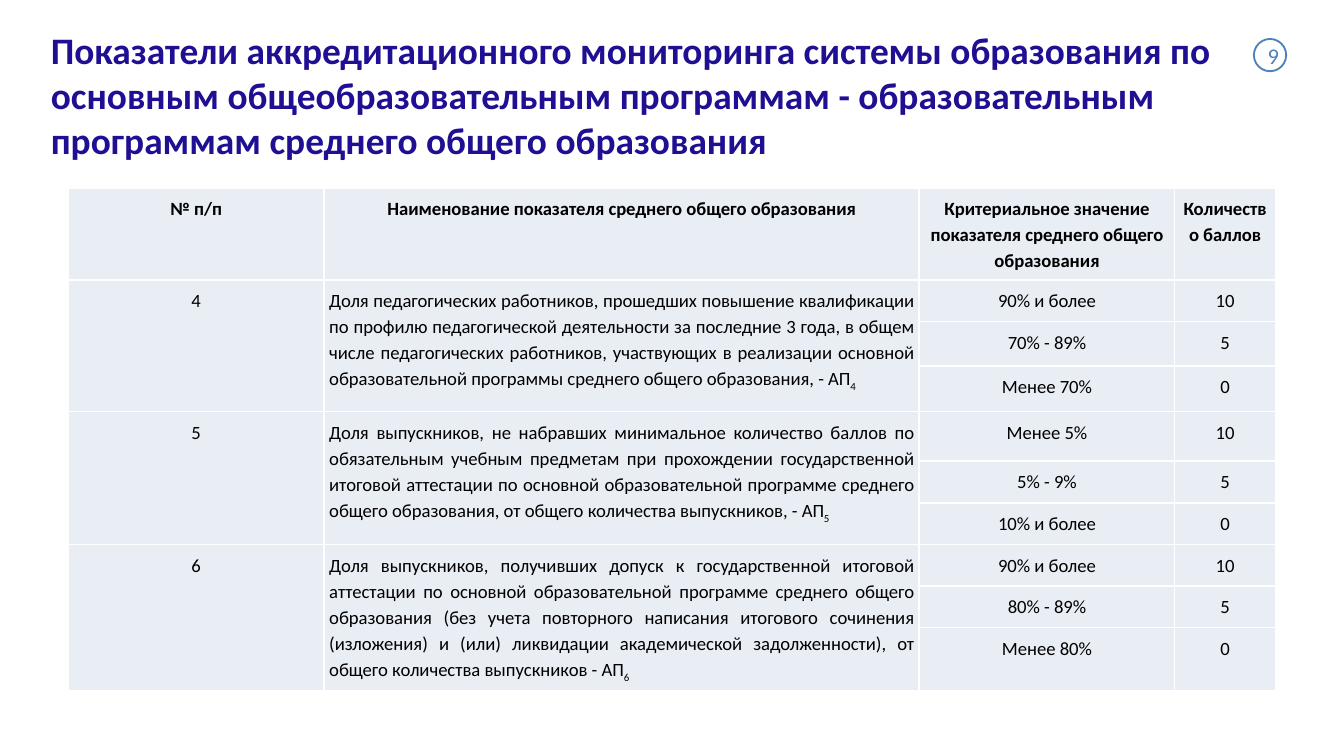
from lxml import etree
from pptx import Presentation
from pptx import util as u
from pptx.dml.color import RGBColor
from pptx.enum import shapes, text
from pptx.oxml.ns import qn

HUES = {"title": "1F0F93", "ink": "000000", "cell": "E9EDF4",
        "rule": "FFFFFF", "badge": "4F81BD"}
ALIGN = text.PP_ALIGN


def write(frame, words, size=10, hue="ink", bold=False, align=ALIGN.CENTER,
          space=None, sub="", pad=(0.1, 0.05, 0.1, 0.05),
          anchor=text.MSO_ANCHOR.MIDDLE):
    """Fill a text frame with one paragraph, ending in an optional subscript."""
    frame.word_wrap = True
    frame.vertical_anchor = anchor
    (frame.margin_left, frame.margin_top,
     frame.margin_right, frame.margin_bottom) = map(u.Inches, pad)
    para = frame.paragraphs[0]
    para.alignment = align
    if space:
        para.line_spacing = space
    for part in filter(None, (words, sub)):
        run = para.add_run()
        run.text = part
        run.font.name = "Calibri"
        run.font.size = u.Pt(size)
        run.font.bold = bold
        run.font.color.rgb = RGBColor.from_string(HUES[hue])
    if sub:
        run.font._element.set("baseline", "-25000")


def rule(cell):
    """Draw a thin line on all four sides of a cell."""
    props = cell._tc.get_or_add_tcPr()
    for spot, side in enumerate(("a:lnL", "a:lnR", "a:lnT", "a:lnB")):
        line = etree.Element(qn(side), w=str(u.Pt(1)))
        fill = etree.SubElement(line, qn("a:solidFill"))
        etree.SubElement(fill, qn("a:srgbClr"), val=HUES["rule"])
        props.insert(spot, line)


deck = Presentation()
deck.slide_width = u.Inches(10)
deck.slide_height = u.Inches(10 * 9 / 16)
slide = deck.slides.add_slide(deck.slide_layouts[6])

# Table: each indicator spans three graded rows
heads = ["№ п/п", "Наименование показателя среднего общего образования",
         "Критериальное значение показателя среднего общего образования",
         "Количество баллов"]
items = [
    ("4", "Доля педагогических работников, прошедших повышение квалификации "
     "по профилю педагогической деятельности за последние 3 года, в общем "
     "числе педагогических работников, участвующих в реализации основной "
     "образовательной программы среднего общего образования, - АП",
     ["90% и более", "70% - 89%", "Менее 70%"]),
    ("5", "Доля выпускников, не набравших минимальное количество баллов по "
     "обязательным учебным предметам при прохождении государственной "
     "итоговой аттестации по основной образовательной программе среднего "
     "общего образования, от общего количества выпускников, - АП",
     ["Менее 5%", "5% - 9%", "10% и более"]),
    ("6", "Доля выпускников, получивших допуск к государственной итоговой "
     "аттестации по основной образовательной программе среднего общего "
     "образования (без учета повторного написания итогового сочинения "
     "(изложения) и (или) ликвидации академической задолженности), от "
     "общего количества выпускников - АП",
     ["90% и более", "80% - 89%", "Менее 80%"]),
]
points = ["10", "5", "0"]
wides = [1.9, 4.43, 1.9, 0.75]
highs = [0.31, 0.31, 0.33, 0.34, 0.37, 0.31, 0.31, 0.31, 0.31, 0.39]

table = slide.shapes.add_table(
    len(highs), len(wides), u.Inches(0.51), u.Inches(1.4),
    u.Inches(sum(wides)), u.Inches(3.81)).table
table.first_row = table.horz_banding = False
for col, wide in zip(table.columns, wides):
    col.width = u.Inches(wide)
for row, high in zip(table.rows, highs):
    row.height = u.Inches(high)
for cell in table.iter_cells():
    cell.fill.solid()
    cell.fill.fore_color.rgb = RGBColor.from_string(HUES["cell"])
    cell.margin_left = cell.margin_right = u.Inches(0.04)
    cell.margin_top = cell.margin_bottom = u.Inches(0.05)
    rule(cell)

grid = {"space": 1.15, "pad": (0.04, 0.05, 0.04, 0.05),
        "anchor": text.MSO_ANCHOR.TOP}
for col, head in enumerate(heads):
    write(table.cell(0, col).text_frame, head, bold=True, **grid)
for group, (num, name, grades) in enumerate(items):
    top = 1 + 3 * group
    for col in (0, 1):
        table.cell(top, col).merge(table.cell(top + 2, col))
    write(table.cell(top, 0).text_frame, num, **grid)
    write(table.cell(top, 1).text_frame, name, sub=num,
          align=ALIGN.JUSTIFY, **grid)
    for step, (grade, point) in enumerate(zip(grades, points)):
        write(table.cell(top + step, 2).text_frame, grade, **grid)
        write(table.cell(top + step, 3).text_frame, point, **grid)

# Title
title = slide.shapes.add_textbox(
    u.Inches(0.28), u.Inches(0.53), u.Inches(9), u.Inches(0.35))
write(title.text_frame,
      "Показатели аккредитационного мониторинга системы образования по "
      "основным общеобразовательным программам - образовательным "
      "программам среднего общего образования",
      size=20, hue="title", bold=True, align=ALIGN.LEFT)

# Page number badge
badge = slide.shapes.add_shape(
    shapes.MSO_SHAPE.OVAL, u.Inches(9.33), u.Inches(0.29),
    u.Inches(0.24), u.Inches(0.24))
badge.shadow.inherit = False
badge.fill.solid()
badge.fill.fore_color.rgb = RGBColor.from_string(HUES["rule"])
badge.line.color.rgb = RGBColor.from_string(HUES["badge"])
badge.line.width = u.Pt(1)
write(badge.text_frame, "9", size=12, hue="badge", pad=(0.05, 0, 0, 0))

deck.save("out.pptx")
